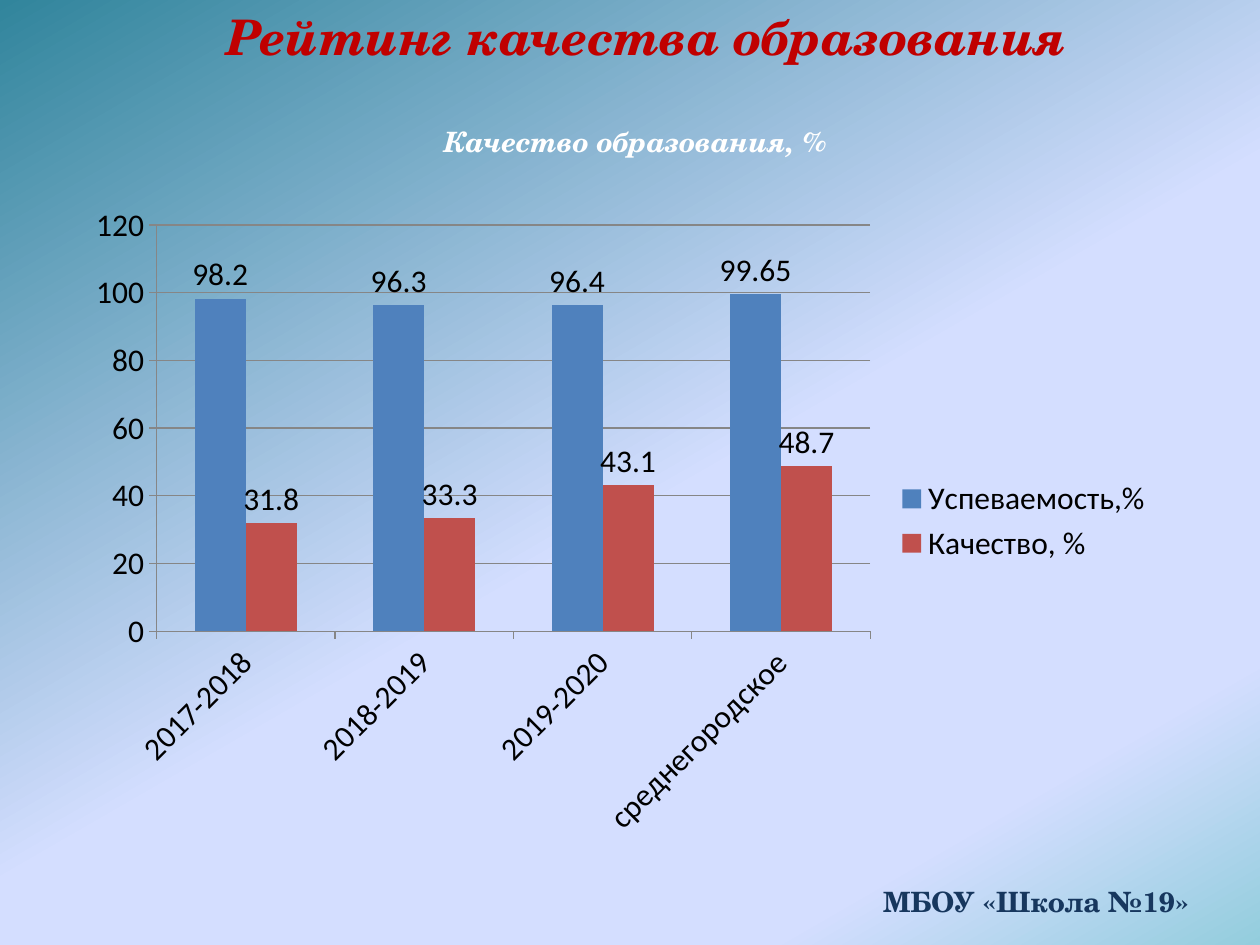
from lxml import etree
from pptx import Presentation
from pptx.chart.data import CategoryChartData
from pptx.dml.color import RGBColor
from pptx.enum.chart import XL_CHART_TYPE, XL_LABEL_POSITION, XL_LEGEND_POSITION, XL_TICK_MARK
from pptx.enum.text import MSO_ANCHOR, PP_ALIGN
from pptx.oxml.ns import qn
from pptx.util import Pt

CLUSTERED = XL_CHART_TYPE.COLUMN_CLUSTERED
OUTSIDE_END = XL_LABEL_POSITION.OUTSIDE_END
LEGEND_RIGHT = XL_LEGEND_POSITION.RIGHT
TICK_OUTSIDE = XL_TICK_MARK.OUTSIDE
MIDDLE = MSO_ANCHOR.MIDDLE
CENTER = PP_ALIGN.CENTER

HEADING_FONT = "TeX Gyre Schola"
CHART_FONT = "Calibri"
COLORS = {
    "title": "C00000", "school": "17375E", "subtitle": "FFFFFF",
    "chart_text": "000000", "axis": "868686",
    "attainment": "4F81BD", "quality": "C0504D",
    "teal": "31859C", "lavender": "D4DEFF", "aqua": "93CDDD",
}
GRADIENT = [(0, "teal", 75), (53, "lavender", 100), (83, "lavender", 100), (100, "aqua", 100)]
YEARS = ["2017-2018", "2018-2019", "2019-2020", "среднегородское"]
SERIES = [
    ("Успеваемость,%", "attainment", (98.2, 96.3, 96.4, 99.65)),
    ("Качество, %", "quality", (31.8, 33.3, 43.1, 48.7)),
]


def color(name):
    """Return the named palette colour."""
    return RGBColor.from_string(COLORS[name])


def paint_background(slide):
    """Fill the background with the diagonal gradient."""
    fill = slide.background.fill
    fill.gradient()
    gradient = slide.background._cSld.find(".//" + qn("a:gradFill"))
    stops = gradient.find(qn("a:gsLst"))
    for stop in list(stops):
        stops.remove(stop)
    for position, name, opacity in GRADIENT:
        stop = etree.SubElement(stops, qn("a:gs"), pos=str(position * 1000))
        tint = etree.SubElement(stop, qn("a:srgbClr"), val=COLORS[name])
        if opacity < 100:
            etree.SubElement(tint, qn("a:alpha"), val=str(opacity * 1000))
    gradient.find(qn("a:lin")).set("ang", str(60 * 60000))


def add_heading(slide, box, text, size, color_name, italic=True, wrap=True):
    """Place one centred bold line in the given box."""
    shape = slide.shapes.add_textbox(*map(Pt, box))
    frame = shape.text_frame
    frame.word_wrap = wrap
    frame.vertical_anchor = MIDDLE
    paragraph = frame.paragraphs[0]
    paragraph.text = text
    paragraph.alignment = CENTER
    font = paragraph.font
    font.name, font.size = HEADING_FONT, Pt(size)
    font.bold, font.italic = True, italic
    font.color.rgb = color(color_name)


def add_quality_chart(slide, box):
    """Place the column chart of both ratings in the given box."""
    data = CategoryChartData()
    data.categories = YEARS
    for name, _, values in SERIES:
        data.add_series(name, values)
    chart = slide.shapes.add_chart(CLUSTERED, *map(Pt, box), data).chart
    chart.has_title = False
    chart.font.name, chart.font.size = CHART_FONT, Pt(18)
    chart.font.color.rgb = color("chart_text")
    chart.has_legend = True
    chart.legend.position = LEGEND_RIGHT
    chart.legend.include_in_layout = False

    for axis in (chart.category_axis, chart.value_axis):
        axis.major_tick_mark = TICK_OUTSIDE
        axis.format.line.color.rgb = color("axis")
        axis.format.line.width = Pt(0.75)
    gridlines = chart.value_axis.major_gridlines.format.line
    gridlines.color.rgb = color("axis")
    gridlines.width = Pt(0.75)

    plot = chart.plots[0]
    plot.gap_width = 150
    plot.vary_by_categories = False
    for series, (_, color_name, _) in zip(plot.series, SERIES):
        series.format.fill.solid()
        series.format.fill.fore_color.rgb = color(color_name)
        series.data_labels.show_value = True
        series.data_labels.position = OUTSIDE_END


def main():
    """Build and save the slide."""
    presentation = Presentation()
    presentation.slide_width, presentation.slide_height = Pt(720), Pt(540)
    slide = presentation.slides.add_slide(presentation.slide_layouts[6])
    paint_background(slide)
    add_heading(slide, (112.3, 0, 514.8, 41), "Рейтинг качества образования", 28, "title", wrap=False)
    add_heading(slide, (478, 500.4, 228.2, 28.8), "МБОУ «Школа №19»", 16, "school", italic=False)
    add_heading(slide, (201.6, 67.7, 323.3, 26.6), "Качество образования, %", 16, "subtitle")
    add_quality_chart(slide, (42.5, 110.2, 623.5, 375.1))
    presentation.save("out.pptx")


if __name__ == "__main__":
    main()
